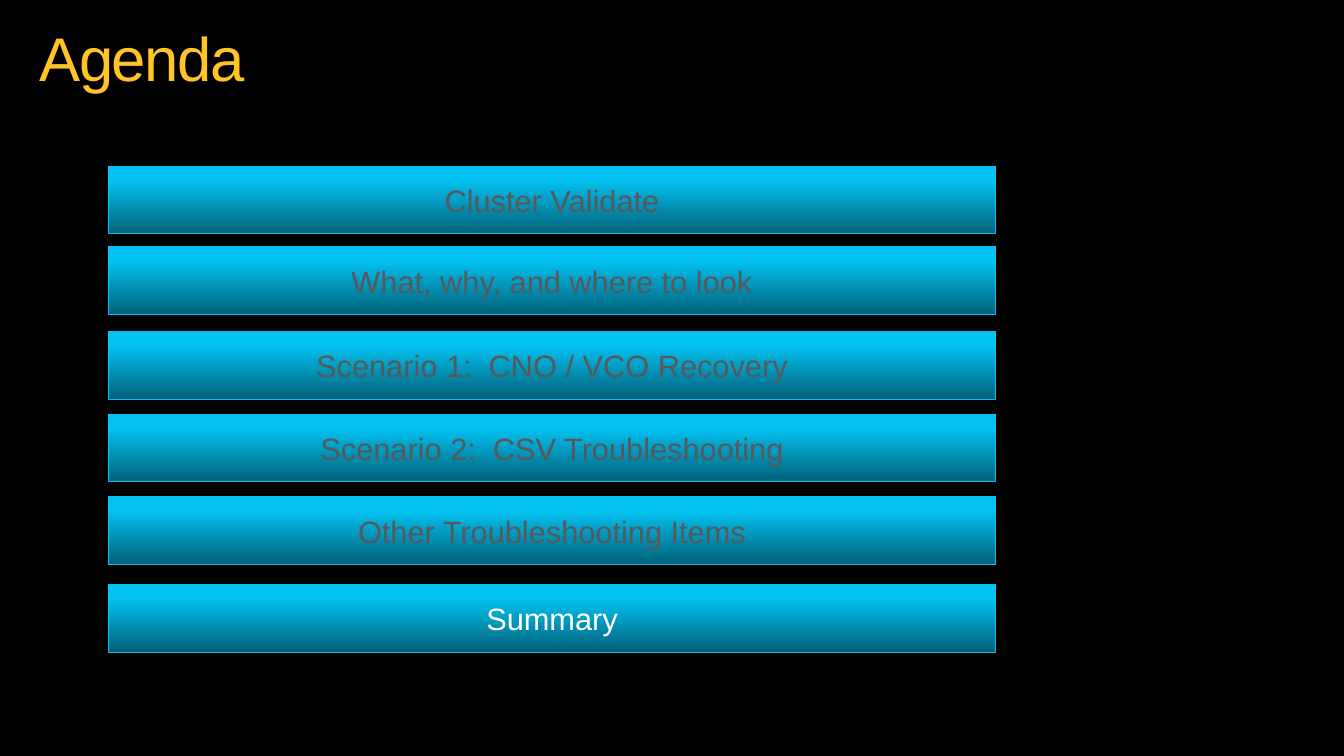
from pptx import Presentation
from pptx.dml.color import RGBColor
from pptx.enum.shapes import MSO_SHAPE as Shape
from pptx.enum.text import MSO_ANCHOR as Anchor, PP_ALIGN as Align
from pptx.util import Inches, Pt

BLACK = RGBColor(0x00, 0x00, 0x00)
WHITE = RGBColor(0xFF, 0xFF, 0xFF)
GOLD = RGBColor(0xFF, 0xC4, 0x25)
GRAY = RGBColor(0x59, 0x58, 0x5A)
CYAN = RGBColor(0x03, 0xC2, 0xF1)
TEAL = RGBColor(0x01, 0x61, 0x78)

TOPICS = [
    ("Cluster Validate", 1.65),
    ("What, why, and where to look", 2.45),
    ("Scenario 1:  CNO / VCO Recovery", 3.29),
    ("Scenario 2:  CSV Troubleshooting", 4.11),
    ("Other Troubleshooting Items", 4.93),
    ("Summary", 5.8),
]
ACTIVE = "Summary"


class Deck:
    face = "Arial"

    def __init__(self):
        self.file = Presentation()
        self.file.slide_width = Inches(13.33)
        self.file.slide_height = Inches(7.5)
        self.slide = self.file.slides.add_slide(self.file.slide_layouts[6])
        back = self.slide.background.fill
        back.solid()
        back.fore_color.rgb = BLACK

    def label(self, frame, text, size, color, align):
        frame.word_wrap = True
        frame.vertical_anchor = Anchor.MIDDLE
        frame.text = text
        line = frame.paragraphs[0]
        line.alignment = align
        run = line.runs[0]
        run.font.name = self.face
        run.font.size = Pt(size)
        run.font.color.rgb = color
        return line

    def title(self, text):
        box = self.slide.shapes.add_textbox(
            Inches(0.39), Inches(0.17), Inches(10.2), Inches(0.89))
        frame = box.text_frame
        frame.margin_left = frame.margin_right = 0
        frame.margin_top = frame.margin_bottom = 0
        line = self.label(frame, text, 44, GOLD, Align.LEFT)
        line.line_spacing = 0.9
        line.runs[0]._r.get_or_add_rPr().set("spc", "-100")

    def bar(self, text, top, color):
        bar = self.slide.shapes.add_shape(
            Shape.ROUNDED_RECTANGLE,
            Inches(1.08), Inches(top), Inches(8.79), Inches(0.67))
        bar.adjustments[0] = 0
        bar.shadow.inherit = False
        bar.fill.gradient()
        bar.fill.gradient_angle = 90
        for stop, (place, tint) in zip(
                bar.fill.gradient_stops, [(0, TEAL), (0.8, CYAN)]):
            stop.position = place
            stop.color.rgb = tint
        bar.line.color.rgb = CYAN
        bar.line.width = Pt(0.75)
        self.label(bar.text_frame, text, 22, color, Align.CENTER)

    def save(self):
        self.file.save("out.pptx")


def main():
    deck = Deck()
    deck.title("Agenda")
    for topic, top in TOPICS:
        deck.bar(topic, top, WHITE if topic == ACTIVE else GRAY)
    deck.save()


if __name__ == "__main__":
    main()
